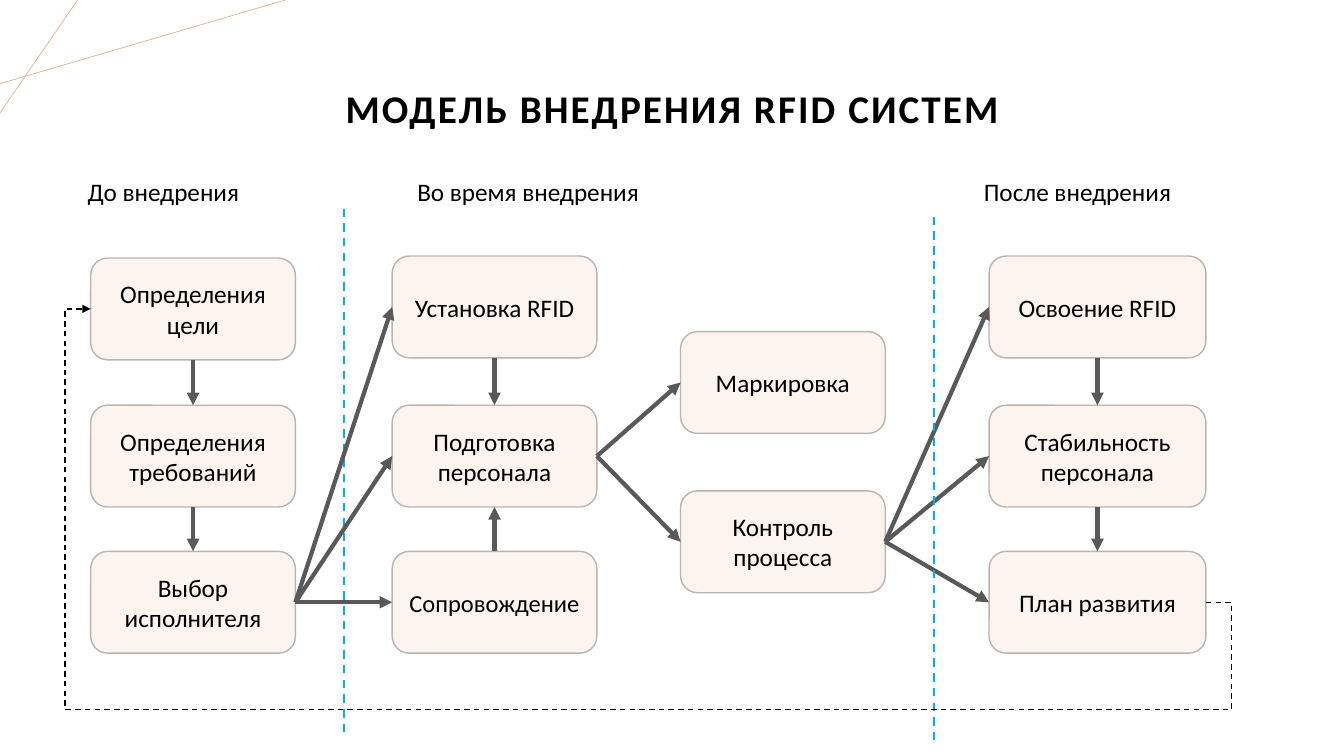
import dataclasses

import pptx
import pptx.dml.color
import pptx.enum.dml
import pptx.enum.shapes
import pptx.enum.text
import pptx.oxml
import pptx.oxml.ns
import pptx.util

PX = 9144  # EMU per px, 100 px to the inch
TOP, LEFT, BOTTOM, RIGHT = range(4)  # connection sites of a rounded rectangle


@dataclasses.dataclass(frozen=True)
class Theme:
    font: str = "Calibri"
    ink: str = "000000"
    box_fill: str = "FBF4EF"
    box_line: str = "BAB5B1"
    arrow: str = "595959"
    divider: str = "00B0F0"
    ornament: str = "E2B18D"
    title_size: float = 28
    body_size: float = 18
    tight_size: float = 17.5


@dataclasses.dataclass(frozen=True)
class Step:
    text: str
    left: int
    top: int
    width: int = 203
    height: int = 101
    size: float = Theme.body_size

    def site(self, side: int) -> tuple[int, int]:
        middle_x = self.left + self.width // 2
        middle_y = self.top + self.height // 2
        return {
            TOP: (middle_x, self.top),
            LEFT: (self.left, middle_y),
            BOTTOM: (middle_x, self.top + self.height),
            RIGHT: (self.left + self.width, middle_y),
        }[side]


@dataclasses.dataclass(frozen=True)
class Link:
    start: str
    start_side: int
    end: str
    end_side: int


@dataclasses.dataclass(frozen=True)
class Line:
    start: tuple[int, int]
    end: tuple[int, int]
    color: str
    weight: float
    dashed: bool = False


@dataclasses.dataclass(frozen=True)
class Label:
    text: str
    left: int
    width: int


THEME = Theme()
BEFORE, DURING, CONTROL, AFTER = 90, 389, 675, 981  # left edges of the columns
ROWS = (254, 402, 547)

STEPS = {
    "goal": Step("Определения цели", BEFORE, 256),
    "needs": Step("Определения требований", BEFORE, ROWS[1]),
    "vendor": Step("Выбор исполнителя", BEFORE, ROWS[2]),
    "install": Step("Установка RFID", DURING, ROWS[0]),
    "training": Step("Подготовка персонала", DURING, ROWS[1]),
    "support": Step("Сопровождение", DURING, ROWS[2], size=THEME.tight_size),
    "marking": Step("Маркировка", CONTROL, 329),
    "control": Step("Контроль процесса", CONTROL, 487),
    "adoption": Step("Освоение RFID", AFTER, ROWS[0], 215),
    "stability": Step("Стабильность персонала", AFTER, ROWS[1], 215),
    "plan": Step("План развития", AFTER, ROWS[2], 215),
}

DOWNWARD = [("goal", "needs"), ("needs", "vendor"), ("install", "training"),
            ("adoption", "stability"), ("stability", "plan")]
FANS = {
    "vendor": ("install", "training", "support"),
    "training": ("marking", "control"),
    "control": ("adoption", "stability", "plan"),
}
LINKS = (
    [Link(start, BOTTOM, end, TOP) for start, end in DOWNWARD]
    + [Link("support", TOP, "training", BOTTOM)]
    + [Link(start, RIGHT, end, LEFT) for start, ends in FANS.items() for end in ends]
)
FEEDBACK = Link("plan", RIGHT, "goal", LEFT)
FEEDBACK_BENDS = (-2300, -36600, 102300)

ORNAMENTS = [
    Line((0, 83), (283, 0), THEME.ornament, 0.5),
    Line((77, 0), (0, 112), THEME.ornament, 0.5),
]
DIVIDERS = [
    Line((341, 207), (341, 732), THEME.divider, 1.5, True),
    Line((926, 215), (926, 740), THEME.divider, 1.5, True),
]
LABELS = [
    Label("До внедрения", 77, 267),
    Label("Во время внедрения", 404, 388),
    Label("После внедрения", 966, 267),
]


def rgb(color: str) -> pptx.dml.color.RGBColor:
    return pptx.dml.color.RGBColor.from_string(color)


def style_font(para, size: float) -> None:
    para.font.name = THEME.font
    para.font.size = pptx.util.Pt(size)
    para.font.color.rgb = rgb(THEME.ink)


def draw_line(page, line: Line, kind=pptx.enum.shapes.MSO_CONNECTOR.STRAIGHT):
    ends = [value * PX for value in line.start + line.end]
    connector = page.shapes.add_connector(kind, *ends)
    connector.line.color.rgb = rgb(line.color)
    connector.line.width = pptx.util.Pt(line.weight)
    if line.dashed:
        connector.line.dash_style = pptx.enum.dml.MSO_LINE.DASH
    pptx.oxml.ns.qn("a:effectLst")
    properties = connector._element.spPr
    properties.append(pptx.oxml.parse_xml(f'<a:effectLst {pptx.oxml.ns.nsdecls("a")}/>'))
    return connector


def draw_link(page, boxes: dict, link: Link, color: str, weight: float,
              dashed: bool = False, kind=pptx.enum.shapes.MSO_CONNECTOR.STRAIGHT):
    start = STEPS[link.start].site(link.start_side)
    end = STEPS[link.end].site(link.end_side)
    connector = draw_line(page, Line(start, end, color, weight, dashed), kind)
    connector.begin_connect(boxes[link.start], link.start_side)
    connector.end_connect(boxes[link.end], link.end_side)
    connector.line._get_or_add_ln().append(pptx.oxml.parse_xml(
        f'<a:tailEnd {pptx.oxml.ns.nsdecls("a")} type="triangle"/>'))
    return connector


def draw_feedback(page, boxes: dict) -> None:
    connector = draw_link(page, boxes, FEEDBACK, THEME.ink, 1, True,
                          pptx.enum.shapes.MSO_CONNECTOR.ELBOW)
    guides = "".join(f'<a:gd name="adj{number}" fmla="val {bend}"/>'
                     for number, bend in enumerate(FEEDBACK_BENDS, 1))
    geometry = connector._element.spPr.find(pptx.oxml.ns.qn("a:prstGeom"))
    geometry.getparent().replace(geometry, pptx.oxml.parse_xml(
        f'<a:prstGeom {pptx.oxml.ns.nsdecls("a")} prst="bentConnector5">'
        f'<a:avLst>{guides}</a:avLst></a:prstGeom>'))


def draw_step(page, step: Step):
    box = page.shapes.add_shape(
        pptx.enum.shapes.MSO_SHAPE.ROUNDED_RECTANGLE,
        step.left * PX, step.top * PX, step.width * PX, step.height * PX)
    box.shadow.inherit = False
    box.fill.solid()
    box.fill.fore_color.rgb = rgb(THEME.box_fill)
    box.line.color.rgb = rgb(THEME.box_line)
    box.line.width = pptx.util.Pt(1)
    box.text_frame.word_wrap = True
    box.text_frame.vertical_anchor = pptx.enum.text.MSO_ANCHOR.MIDDLE
    para = box.text_frame.paragraphs[0]
    para.text = step.text
    para.alignment = pptx.enum.text.PP_ALIGN.CENTER
    style_font(para, step.size)
    return box


def draw_label(page, label: Label) -> None:
    box = page.shapes.add_textbox(label.left * PX, 170 * PX, label.width * PX, 40 * PX)
    box.text_frame.word_wrap = True
    box.text_frame.auto_size = pptx.enum.text.MSO_AUTO_SIZE.SHAPE_TO_FIT_TEXT
    para = box.text_frame.paragraphs[0]
    para.text = label.text
    style_font(para, THEME.body_size)


def set_title(page, text: str) -> None:
    title = page.shapes.title
    title.left, title.top, title.width, title.height = (
        value * PX for value in (92, 37, 1150, 145))
    title.text_frame.vertical_anchor = pptx.enum.text.MSO_ANCHOR.MIDDLE
    para = title.text_frame.paragraphs[0]
    para.text = text
    para.alignment = pptx.enum.text.PP_ALIGN.CENTER
    para.line_spacing = 0.9
    style_font(para, THEME.title_size)
    para.font.bold = True
    para.runs[0].font._element.set("spc", "150")  # letter spacing


def main() -> None:
    deck = pptx.Presentation()
    deck.slide_width, deck.slide_height = 1333 * PX, 750 * PX
    page = deck.slides.add_slide(deck.slide_layouts[5])
    set_title(page, "МОДЕЛЬ ВНЕДРЕНИЯ RFID СИСТЕМ")
    # Corner ornament and left divider lie under the boxes
    for line in ORNAMENTS + DIVIDERS[:1]:
        draw_line(page, line)
    # Process steps and their arrows
    boxes = {name: draw_step(page, step) for name, step in STEPS.items()}
    for link in LINKS:
        draw_link(page, boxes, link, THEME.arrow, 3)
    # Right divider, phase labels and feedback loop
    draw_line(page, DIVIDERS[1])
    for label in LABELS:
        draw_label(page, label)
    draw_feedback(page, boxes)
    deck.save("out.pptx")


if __name__ == "__main__":
    main()
